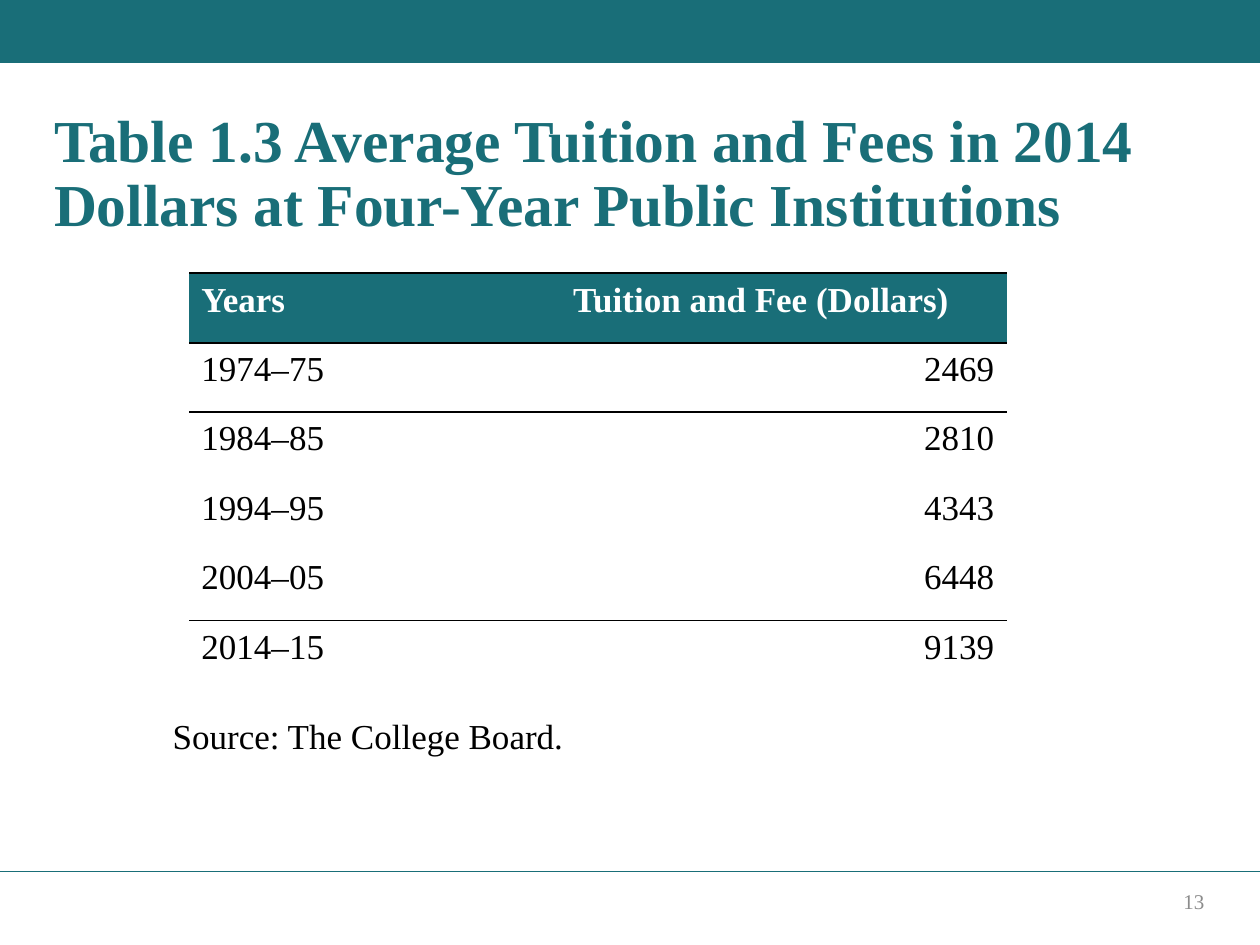
"""Build the tuition and fees table slide."""
from lxml import etree
from pptx import Presentation
from pptx.dml.color import RGBColor
from pptx.enum.shapes import MSO_CONNECTOR, MSO_SHAPE
from pptx.enum.text import MSO_ANCHOR, PP_ALIGN
from pptx.oxml.ns import qn
from pptx.util import Cm, Pt

LEFT, CENTER, RIGHT = PP_ALIGN.LEFT, PP_ALIGN.CENTER, PP_ALIGN.RIGHT
TOP, MIDDLE = MSO_ANCHOR.TOP, MSO_ANCHOR.MIDDLE
RECTANGLE, STRAIGHT = MSO_SHAPE.RECTANGLE, MSO_CONNECTOR.STRAIGHT

COLORS = {"teal": "196E78", "black": "000000", "white": "FFFFFF", "gray": "8C8C8C"}
PLAIN_TABLE = "{2D5ABB26-0587-4C30-8999-92F81FD0307C}"
ROWS = [
    ("Years", "Tuition and Fee (Dollars)"),
    ("1974–75", "2469"),
    ("1984–85", "2810"),
    ("1994–95", "4343"),
    ("2004–05", "6448"),
    ("2014–15", "9139"),
]
RULES = {0: {"lnT": 1.25, "lnB": 1.25}, 1: {"lnB": 1}, 4: {"lnB": 1}}


class SlideBuilder:
    """Hold the style and the current slide."""

    def __init__(self, slide, font_name):
        self.slide = slide
        self.font_name = font_name

    def color(self, name):
        return RGBColor.from_string(COLORS[name])

    def set_text(self, frame, text, size, color, bold=False, **layout):
        paragraph = frame.paragraphs[0]
        paragraph.text = text
        for name, value in layout.items():
            setattr(paragraph, name, value)
        font_format = {"name": self.font_name, "size": Pt(size), "bold": bold}
        for name, value in font_format.items():
            setattr(paragraph.font, name, value)
        paragraph.font.color.rgb = self.color(color)

    def bar(self, left, top, width, height, color):
        shape = self.slide.shapes.add_shape(
            RECTANGLE, Cm(left), Cm(top), Cm(width), Cm(height))
        shape.shadow.inherit = False
        shape.fill.solid()
        shape.fill.fore_color.rgb = self.color(color)
        shape.line.fill.background()

    def rule(self, left, right, top, color):
        connector = self.slide.shapes.add_connector(
            STRAIGHT, Cm(left), Cm(top), Cm(right), Cm(top))
        connector.line.color.rgb = self.color(color)
        connector.line.width = Pt(1)
        properties = connector.element.find(qn("p:spPr"))
        etree.SubElement(properties, qn("a:effectLst"))

    def text(self, left, top, width, height, text, size, color, anchor=TOP, **style):
        shape = self.slide.shapes.add_textbox(
            Cm(left), Cm(top), Cm(width), Cm(height))
        shape.text_frame.word_wrap = True
        shape.text_frame.vertical_anchor = anchor
        self.set_text(shape.text_frame, text, size, color, **style)

    def table(self, left, top, widths, row_height, rows, rules):
        frame = self.slide.shapes.add_table(
            len(rows), len(widths), Cm(left), Cm(top),
            Cm(sum(widths)), Cm(row_height * len(rows)))
        table = frame.table
        table.first_row = table.horz_banding = False
        next(frame.element.iter(qn("a:tableStyleId"))).text = PLAIN_TABLE
        for column, width in zip(table.columns, widths):
            column.width = Cm(width)
        for row_index, row in enumerate(rows):
            table.rows[row_index].height = Cm(row_height)
            for column_index, text in enumerate(row):
                cell = table.cell(row_index, column_index)
                self.fill_cell(cell, text, row_index == 0, column_index > 0)
        for index, properties in enumerate(frame.element.iter(qn("a:tcPr"))):
            self.border(properties, rules.get(index // len(widths), {}))

    def fill_cell(self, cell, text, is_header, is_value):
        margins = {"margin_left": 0.25, "margin_right": 0.25,
                   "margin_top": 0.15, "margin_bottom": 0.15}
        for name, value in margins.items():
            setattr(cell, name, Cm(value))
        if is_header:
            cell.fill.solid()
            cell.fill.fore_color.rgb = self.color("teal")
        else:
            cell.fill.background()
        value_alignment = CENTER if is_header else RIGHT
        self.set_text(cell.text_frame, text, 20, "white" if is_header else "black",
                      is_header, alignment=value_alignment if is_value else LEFT)

    def border(self, properties, sides):
        for position, (side, width) in enumerate(sides.items()):
            line = etree.Element(qn(f"a:{side}"), w=str(int(Pt(width))))
            fill = etree.SubElement(line, qn("a:solidFill"))
            etree.SubElement(fill, qn("a:srgbClr"), val=COLORS["black"])
            properties.insert(position, line)


def main():
    presentation = Presentation()
    presentation.slide_width, presentation.slide_height = Cm(25.4), Cm(19.05)
    slide = presentation.slides.add_slide(presentation.slide_layouts[6])
    builder = SlideBuilder(slide, "Times New Roman")
    builder.bar(0, 0, 25.4, 1.27, "teal")
    builder.rule(0, 25.4, 17.57, "teal")
    builder.text(
        0.84, 2.11, 23.7, 2.34,
        "Table 1.3 Average Tuition and Fees in 2014 Dollars at Four-Year Public Institutions",
        34, "teal", bold=True, line_spacing=0.9)
    builder.table(3.81, 5.51, [6.58, 9.9], 1.4, ROWS, RULES)
    builder.text(3.23, 14.38, 11.18, 1.24, "Source: The College Board.",
                 20, "black", line_spacing=0.9)
    builder.text(17.93, 17.65, 6.6, 1.02, "13", 12, "gray", MIDDLE, alignment=RIGHT)
    presentation.save("out.pptx")


if __name__ == "__main__":
    main()
